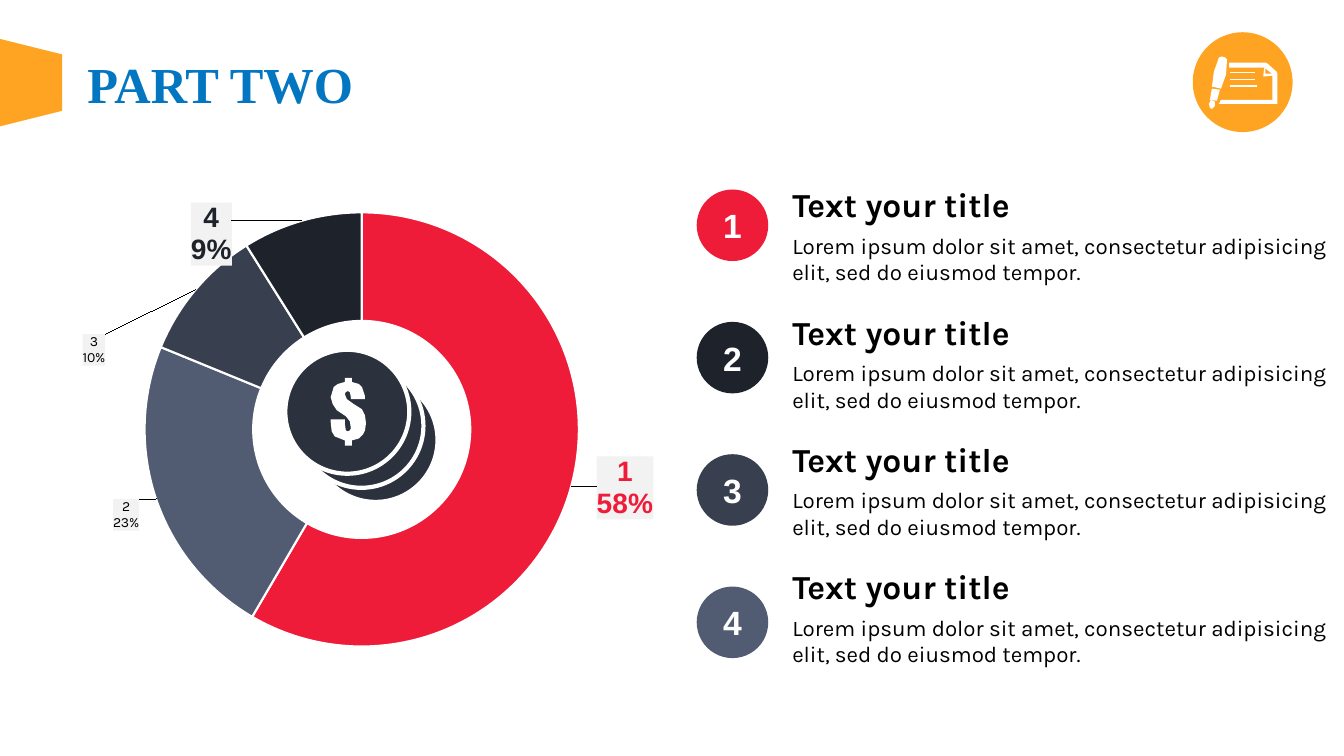
from dataclasses import dataclass
from math import cos, pi, sin

from lxml import etree
from pptx import Presentation
from pptx.chart.data import CategoryChartData
from pptx.dml.color import RGBColor
from pptx.enum.chart import XL_CHART_TYPE
from pptx.enum.shapes import MSO_SHAPE
from pptx.enum.text import MSO_ANCHOR, PP_ALIGN
from pptx.oxml import parse_xml
from pptx.oxml.ns import nsdecls, qn
from pptx.util import Inches, Pt

OVAL, TRAPEZOID = MSO_SHAPE.OVAL, MSO_SHAPE.TRAPEZOID
DOUGHNUT = XL_CHART_TYPE.DOUGHNUT
CENTER, MIDDLE = PP_ALIGN.CENTER, MSO_ANCHOR.MIDDLE


@dataclass(frozen=True)
class Theme:
    title: str = "0376C2"
    accent: str = "FFA422"
    red: str = "EE1C39"
    dark: str = "1E222A"
    slate: str = "383F4E"
    steel: str = "515C73"
    coin: str = "2B313D"
    label_back: str = "F2F2F2"
    white: str = "FFFFFF"
    black: str = "000000"
    title_font: str = "Times New Roman"
    body_font: str = "Karla"
    number_font: str = "Arial"
    title_size: int = 36
    heading_size: int = 24
    label_size: int = 20
    body_size: int = 16
    small_size: int = 10


THEME = Theme()
HEADING = "Text your title"
BODY = "Lorem ipsum dolor sit amet, consectetur adipisicing elit, sed do eiusmod tempor."

# Outlines in hundredths of an inch from the corner of the coin or badge.
DOLLAR = [(75, 82), (71, 86), (64, 88), (64, 93), (57, 93), (57, 88), (47, 84), (44, 79),
          (43, 70), (43, 67), (57, 67), (57, 71), (58, 78), (60, 79), (62, 78), (63, 76),
          (62, 69), (58, 64), (49, 58), (45, 52), (43, 45), (46, 35), (50, 32), (57, 30),
          (57, 26), (64, 26), (64, 30), (71, 32), (74, 35), (77, 44), (77, 47), (63, 47),
          (63, 45), (62, 40), (60, 39), (58, 40), (57, 42), (59, 47), (66, 52), (74, 57),
          (77, 63), (78, 71), (77, 78)]
PAPER = [(28, 67), (26, 71), (84, 71), (84, 41), (83, 39), (74, 31), (72, 30), (36, 30),
         (36, 35), (71, 35), (70, 42), (70, 44), (79, 43), (79, 67)]
FOLD = [(78, 41), (72, 41), (72, 36)]
PEN = [
    [(26, 25), (29, 24), (32, 25), (34, 27), (33, 42), (28, 56), (24, 55), (19, 54), (21, 39)],
    [(19, 56), (27, 57), (24, 68), (17, 67)],
    [(18, 67), (22, 69), (22, 73), (19, 76), (17, 75), (16, 71)],
]
WRITING = [[(37, top), (right, top), (right, top + 1.5), (37, top + 1.5)]
           for top, right in ((39, 62), (45.5, 62), (52, 64))]


def style_font(font, name, size, color, bold=False):
    font.name, font.size, font.bold = name, Pt(size), bold
    font.color.rgb = RGBColor.from_string(color)


def paint(shape, color):
    shape.shadow.inherit = False
    shape.fill.solid()
    shape.fill.fore_color.rgb = RGBColor.from_string(color)
    shape.line.fill.background()


def add_preset(slide, kind, left, top, width, height, color):
    shape = slide.shapes.add_shape(kind, Inches(left), Inches(top), Inches(width), Inches(height))
    paint(shape, color)
    return shape


def add_outline(slide, left, top, points, color):
    builder = slide.shapes.build_freeform(*points[0], scale=Inches(0.01))
    builder.add_line_segments(points[1:], close=True)
    paint(builder.convert_to_shape(Inches(left), Inches(top)), color)


def add_text(slide, left, top, width, height, text, size, bold=False):
    frame = slide.shapes.add_textbox(
        Inches(left), Inches(top), Inches(width), Inches(height)).text_frame
    frame.word_wrap = True
    frame.text = text
    style_font(frame.paragraphs[0].font, THEME.body_font, size, THEME.black, bold)


def add_header(slide, left, top, width, height):
    add_preset(slide, TRAPEZOID, -0.13, top + 0.04, 0.87, 0.62, THEME.accent).rotation = 90
    title = slide.shapes.title
    title.left, title.top = Inches(left), Inches(top)
    title.width, title.height = Inches(width), Inches(height)
    frame = title.text_frame
    frame.text = "PART TWO"
    frame.vertical_anchor = MIDDLE
    heading = frame.paragraphs[0]
    heading.alignment = CENTER
    style_font(heading.font, THEME.title_font, THEME.title_size, THEME.title, True)


def add_badge(slide, left, top, size):
    add_preset(slide, OVAL, left, top, size, size, THEME.accent)
    for outline in [PAPER, *PEN, *WRITING]:
        add_outline(slide, left, top, outline, THEME.white)
    add_outline(slide, left, top, FOLD, THEME.accent)


def place_label(label, dx, dy):
    """Shift a data label by fractions of the chart and give it a pale back."""
    label.find(qn("c:idx")).addnext(parse_xml(
        f'<c:layout {nsdecls("c")}><c:manualLayout><c:x val="{dx:.3f}"/>'
        f'<c:y val="{dy:.3f}"/></c:manualLayout></c:layout>'))
    label.find(qn("c:txPr")).addprevious(parse_xml(
        f'<c:spPr {nsdecls("c", "a")}><a:solidFill><a:srgbClr val="{THEME.label_back}"/>'
        '</a:solidFill></c:spPr>'))
    for tag, shown in (("showVal", "0"), ("showCatName", "1"), ("showPercent", "1")):
        label.find(qn(f"c:{tag}")).set("val", shown)
    etree.SubElement(label, qn("c:separator")).text = "\n"


def add_share_chart(slide, left, top, width, height):
    shares = (59, 23, 10, 9)
    colors = (THEME.red, THEME.steel, THEME.slate, THEME.dark)
    big = (THEME.number_font, THEME.label_size)
    small = (THEME.body_font, THEME.small_size, THEME.black)
    label_fonts = ((*big, THEME.red, True), small, small, (*big, THEME.dark, True))
    label_centers = ((6.09, 2.92), (1.14, 3.19), (0.82, 1.55), (1.99, 0.4))
    diameter, center_x, center_y = 4.31, 3.48, 2.34

    data = CategoryChartData()
    data.categories = ["1", "2", "3", "4"]
    data.add_series("Series 1", shares)
    chart = slide.shapes.add_chart(
        DOUGHNUT, Inches(left), Inches(top), Inches(width), Inches(height), data).chart
    chart.has_legend = chart.has_title = False
    style_font(chart.font, *small)
    plot = chart.plots[0]
    plot.vary_by_categories = True
    chart_xml = chart.element
    chart_xml.find(".//" + qn("c:holeSize")).set("val", "70")

    area = chart_xml.find(".//" + qn("c:plotArea"))
    for layout in area.findall(qn("c:layout")):
        area.remove(layout)
    bounds = {"x": (center_x - diameter / 2) / width, "y": (center_y - diameter / 2) / height,
              "w": diameter / width, "h": diameter / height}
    area.insert(0, parse_xml(
        f'<c:layout {nsdecls("c")}><c:manualLayout><c:layoutTarget val="inner"/>'
        '<c:xMode val="edge"/><c:yMode val="edge"/>'
        + "".join(f'<c:{key} val="{value:.3f}"/>' for key, value in bounds.items())
        + '</c:manualLayout></c:layout>'))

    series = plot.series[0]
    series.data_labels.show_value = False
    ring_radius, passed = 0.375 * diameter, 0
    for index, (share, color) in enumerate(zip(shares, colors)):
        point = series.points[index]
        point.format.fill.solid()
        point.format.fill.fore_color.rgb = RGBColor.from_string(color)
        point.format.line.color.rgb = RGBColor.from_string(THEME.white)
        point.format.line.width = Pt(1.5)
        style_font(point.data_label.font, *label_fonts[index])
        angle = 2 * pi * (passed + share / 2) / sum(shares)
        passed += share
        label_x, label_y = label_centers[index]
        place_label(chart_xml.findall(".//" + qn("c:dLbl"))[index],
                    (label_x - center_x - ring_radius * sin(angle)) / width,
                    (label_y - center_y + ring_radius * cos(angle)) / height)


def add_coins(slide, left, top, size):
    """Stack three coins, the front one at the given corner."""
    rim = 0.02
    for depth in (2, 1, 0):
        shift = 0.14 * depth - rim
        coin = add_preset(slide, OVAL, left + shift, top + shift,
                          size + 2 * rim, size + 2 * rim, THEME.coin)
        coin.line.color.rgb = RGBColor.from_string(THEME.white)
        coin.line.width = Pt(3)
    add_outline(slide, left, top, DOLLAR, THEME.white)


def add_items(slide, left, top):
    colors = (THEME.red, THEME.dark, THEME.slate, THEME.steel)
    for index, color in enumerate(colors):
        text_top = top + 1.263 * index
        add_text(slide, left + 0.85, text_top, 4.18, 0.5, HEADING, THEME.heading_size, True)
        add_text(slide, left + 0.85, text_top + 0.47, 5.5, 0.64, BODY, THEME.body_size)
        disc = add_preset(slide, OVAL, left, top + 0.1 + 1.313 * index, 0.71, 0.71, color)
        frame = disc.text_frame
        frame.text = str(index + 1)
        frame.vertical_anchor = MIDDLE
        number = frame.paragraphs[0]
        number.alignment = CENTER
        style_font(number.font, THEME.number_font, THEME.heading_size, THEME.white, True)


def main():
    deck = Presentation()
    deck.slide_width, deck.slide_height = Inches(13.33), Inches(7.5)
    slide = deck.slides.add_slide(deck.slide_layouts[5])
    add_header(slide, 0.42, 0.47, 3.53, 0.71)
    add_badge(slide, 11.83, 0.32, 0.99)
    add_share_chart(slide, 0.11, 1.92, 6.97, 4.64)
    add_coins(slide, 2.85, 3.49, 1.19)
    add_items(slide, 6.91, 1.78)
    deck.save("out.pptx")


if __name__ == "__main__":
    main()
